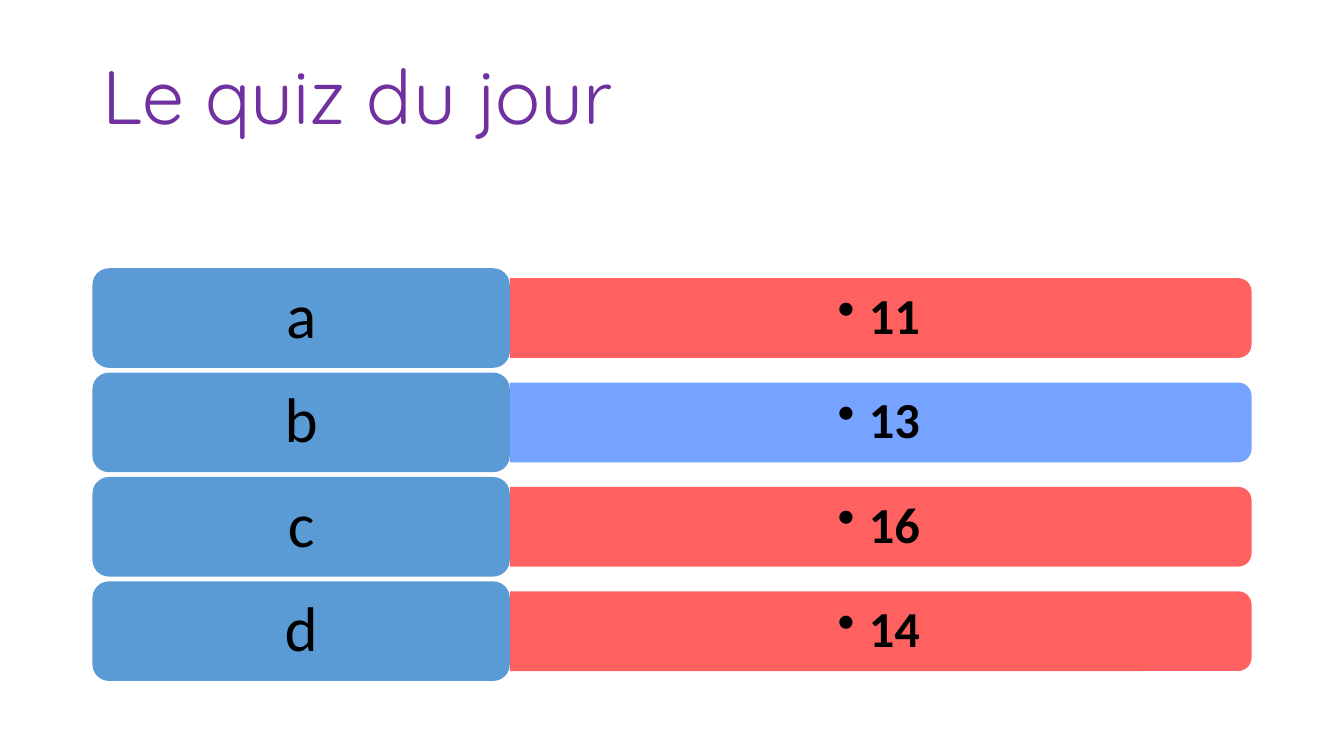
from dataclasses import dataclass

from lxml.etree import SubElement
from pptx import Presentation
from pptx.dml.color import RGBColor
from pptx.enum.shapes import MSO_SHAPE
from pptx.enum.text import MSO_ANCHOR, PP_ALIGN
from pptx.oxml.ns import qn
from pptx.util import Cm, Pt


@dataclass(frozen=True)
class Theme:
    title_color: str = "7030A0"
    ink: str = "000000"
    label: str = "5B9BD5"
    wrong: str = "FF5050"
    right: str = "6699FF"
    title_font: str = "Quicksand"
    font: str = "Calibri"
    title_size: int = 54
    label_size: int = 45
    answer_size: int = 36


class Deck:
    def __init__(self, theme):
        self.theme = theme
        self.prs = Presentation()
        self.prs.slide_width, self.prs.slide_height = Cm(33.87), Cm(19.05)
        self.slide = self.prs.slides.add_slide(self.prs.slide_layouts[6])

    def shape(self, kind, left, top, width, height, color):
        box = self.slide.shapes.add_shape(
            kind, Cm(left), Cm(top), Cm(width), Cm(height))
        box.shadow.inherit = False
        box.fill.solid()
        box.fill.fore_color.rgb = RGBColor.from_string(color)
        box.line.fill.background()
        return box

    def bar(self, left, top, width, height, color):
        """Draw a bar rounded on its right end, slightly see-through."""
        shift = (width - height) / 2
        box = self.shape(MSO_SHAPE.ROUND_2_SAME_RECTANGLE,
                         left + shift, top - shift, height, width, color)
        box.rotation = 90
        tint = box.element.spPr.find(qn("a:solidFill"))[0]
        SubElement(tint, qn("a:alpha"), val="90000")

    def box(self, left, top, width, height):
        return self.slide.shapes.add_textbox(
            Cm(left), Cm(top), Cm(width), Cm(height))

    def text(self, box, words, size, color, font, pad, align, bold=False):
        """Fill a shape with one run; pad holds the side and top insets."""
        frame = box.text_frame
        frame.word_wrap = True
        frame.vertical_anchor = MSO_ANCHOR.MIDDLE
        frame.margin_left = frame.margin_right = Cm(pad[0])
        frame.margin_top = frame.margin_bottom = Cm(pad[1])
        para = frame.paragraphs[0]
        para.alignment = align
        para.line_spacing = 0.9
        run = para.add_run()
        run.text = words
        run.font.size, run.font.bold, run.font.name = Pt(size), bold, font
        run.font.color.rgb = RGBColor.from_string(color)
        return para

    def bullet(self, para):
        para.level = 1
        props = para._p.get_or_add_pPr()
        props.set("marL", str(int(Cm(0.79))))
        props.set("indent", str(-int(Cm(0.79))))
        SubElement(props, qn("a:buChar"), char="•")

    def title(self, words):
        look = self.theme
        self.text(self.box(2.33, 0.69, 29.21, 3.68), words, look.title_size,
                  look.title_color, look.title_font, (0.25, 0.13), PP_ALIGN.LEFT)

    def choice(self, top, letter, answer, color):
        """Draw one quiz row: the answer bar, then its letter."""
        look = self.theme
        left, width, height = 2.33, 10.52, 2.51
        edge = left + width
        self.bar(edge, top + 0.25, 18.69, 2.01, color)
        para = self.text(self.box(edge, top + 0.35, 18.59, 1.81), answer,
                         look.answer_size, look.ink, look.font, (0.38, 0.19),
                         PP_ALIGN.CENTER, bold=True)
        self.bullet(para)
        label = self.shape(MSO_SHAPE.ROUNDED_RECTANGLE, left, top, width,
                           height, look.label)
        self.text(label, letter, look.label_size, look.ink, look.font,
                  (0.48, 0.24), PP_ALIGN.CENTER)


def main():
    look = Theme()
    deck = Deck(look)
    deck.title("Le quiz du jour")
    answers = {"a": "11", "b": "13", "c": "16", "d": "14"}
    for row, (letter, answer) in enumerate(answers.items()):
        color = look.right if letter == "b" else look.wrong
        deck.choice(6.76 + 2.63 * row, letter, answer, color)
    deck.prs.save("out.pptx")


if __name__ == "__main__":
    main()
